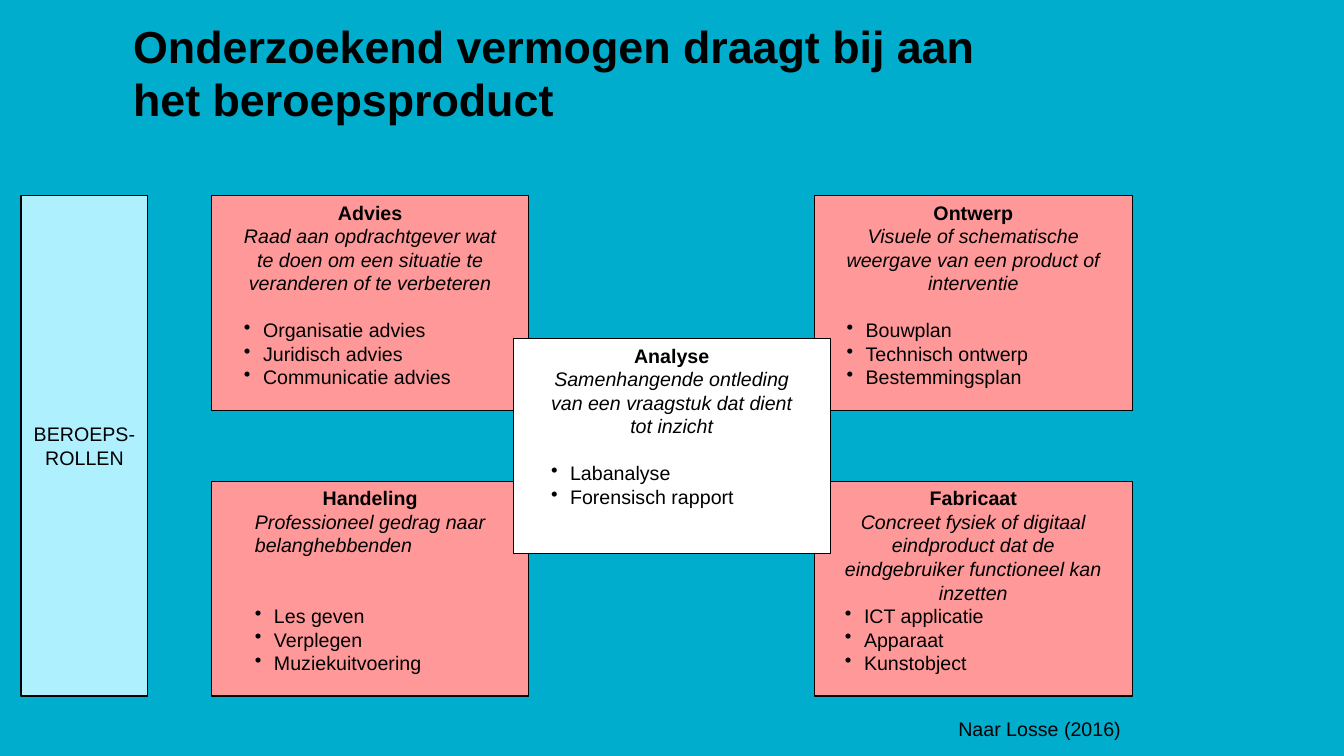
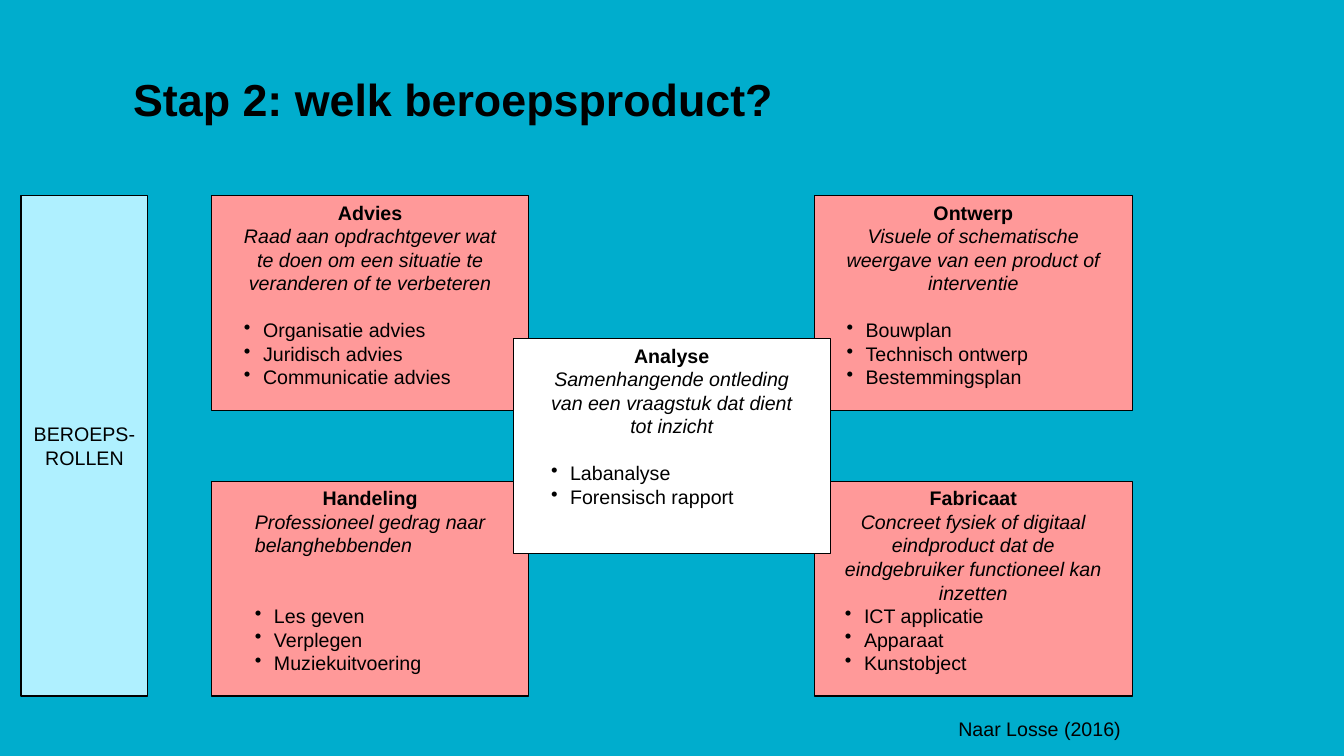
import pptx
import pptx.dml.color
import pptx.enum.shapes
import pptx.enum.text
import pptx.oxml.ns
import pptx.util
import lxml.etree

Cm = pptx.util.Cm
Pt = pptx.util.Pt
Align = pptx.enum.text.PP_ALIGN
Anchor = pptx.enum.text.MSO_ANCHOR
Fit = pptx.enum.text.MSO_AUTO_SIZE

FONT = "Arial"
BLACK, WHITE = "000000", "FFFFFF"
BACK, PINK, PALE = "00ADCD", "FF9999", "AFF0FF"
LEFT, TOP = 5.33, 4.93
STEP_X, STEP_Y = 7.6, 3.6
WIDE, HIGH = 8, 5.41
LINE = 16.8

TITLES = [
    "Onderzoekend vermogen draagt bij aan het beroepsproduct",
    "Stap 2: welk beroepsproduct?",
]
CARDS = [
    (0, 0, PINK, "Advies", Align.CENTER, 1,
     "Raad aan opdrachtgever wat te doen om een situatie te veranderen of te verbeteren",
     ["Organisatie advies", "Juridisch advies", "Communicatie advies"]),
    (2, 0, PINK, "Ontwerp", Align.CENTER, 1,
     "Visuele of schematische weergave van een product of interventie",
     ["Bouwplan", "Technisch ontwerp", "Bestemmingsplan"]),
    (0, 2, PINK, "Handeling", Align.LEFT, 2,
     "Professioneel gedrag naar belanghebbenden",
     ["Les geven", "Verplegen", "Muziekuitvoering"]),
    (2, 2, PINK, "Fabricaat", Align.CENTER, 0,
     "Concreet fysiek of digitaal eindproduct dat de eindgebruiker functioneel kan inzetten",
     ["ICT applicatie", "Apparaat", "Kunstobject"]),
    (1, 1, WHITE, "Analyse", Align.CENTER, 1,
     "Samenhangende ontleding van een vraagstuk dat dient tot inzicht",
     ["Labanalyse", "Forensisch rapport"]),
]


def paint(item, color):
    """Give a fill or line format a solid colour."""
    item.solid()
    item.fore_color.rgb = pptx.dml.color.RGBColor.from_string(color)


def style(para, size=14, bold=False, italic=False, align=Align.LEFT):
    """Format a whole paragraph."""
    para.alignment = align
    font = para.font
    font.name, font.size = FONT, Pt(size)
    font.bold, font.italic = bold, italic
    paint(font.fill, BLACK)


def bullet(para):
    """Turn a paragraph into a hanging bullet item."""
    props = para._p.get_or_add_pPr()
    props.set("marL", str(Cm(0.48)))
    props.set("indent", str(-Cm(0.48)))
    mark = lxml.etree.SubElement(props, pptx.oxml.ns.qn("a:buChar"))
    mark.set("char", "•")


def add_box(slide, left, top, width, height, color):
    """Add a filled rectangle with a thin outline and return its text frame."""
    kind = pptx.enum.shapes.MSO_SHAPE.RECTANGLE
    box = slide.shapes.add_shape(kind, Cm(left), Cm(top), Cm(width), Cm(height))
    box.shadow.inherit = False
    paint(box.fill, color)
    paint(box.line.fill, BLACK)
    box.line.width = Pt(0.75)
    return box.text_frame


def add_card(slide, col, row, color, name, align, gap, about, items):
    """Add a product card with a heading, a description and examples."""
    frame = add_box(slide, LEFT + col * STEP_X, TOP + row * STEP_Y, WIDE, HIGH, color)
    frame.word_wrap = True
    frame.vertical_anchor = Anchor.TOP
    frame.margin_left = frame.margin_right = Cm(0.71)
    frame._txBody.bodyPr.set("anchorCtr", "1")
    head = frame.paragraphs[0]
    head.text = name
    style(head, bold=True, align=Align.CENTER)
    para = frame.add_paragraph()
    para.text = about
    style(para, italic=True, align=align)
    for place, item in enumerate(items):
        para = frame.add_paragraph()
        para.text = item
        bullet(para)
        if place == 0 and gap:
            para.space_before = Pt(gap * LINE)
        style(para)


def add_title(slide, text):
    """Fill and place the title, growing upward from its bottom edge."""
    title = slide.shapes.title
    title.left, title.top = Cm(3.1), Cm(1.7)
    title.width, title.height = Cm(22.86), Cm(1.6)
    frame = title.text_frame
    frame.text = text
    frame.word_wrap = True
    frame.vertical_anchor = Anchor.BOTTOM
    frame.auto_size = Fit.SHAPE_TO_FIT_TEXT
    style(frame.paragraphs[0], size=32, bold=True)


def add_source(slide):
    """Add the source line at the lower right."""
    box = slide.shapes.add_textbox(Cm(23.9), Cm(17.93), Cm(4.62), Cm(0.86))
    frame = box.text_frame
    frame.word_wrap = False
    frame.auto_size = Fit.SHAPE_TO_FIT_TEXT
    para = frame.paragraphs[0]
    para.text = "Naar Losse (2016)"
    style(para)


def add_roles(slide):
    """Add the tall bar that names the professional roles."""
    frame = add_box(slide, 0.53, TOP, 3.2, 2 * STEP_Y + HIGH, PALE)
    frame.word_wrap = False
    frame.vertical_anchor = Anchor.MIDDLE
    para = frame.paragraphs[0]
    para.text = "BEROEPS-\nROLLEN"
    style(para, align=Align.CENTER)


def main():
    """Build and save the slides."""
    deck = pptx.Presentation()
    deck.slide_width, deck.slide_height = Cm(33.87), Cm(19.05)
    paint(deck.slide_master.background.fill, BACK)
    for text in TITLES:
        slide = deck.slides.add_slide(deck.slide_layouts[5])
        add_title(slide, text)
        for card in CARDS:
            add_card(slide, *card)
        add_source(slide)
        add_roles(slide)
    deck.save("out.pptx")


if __name__ == "__main__":
    main()
